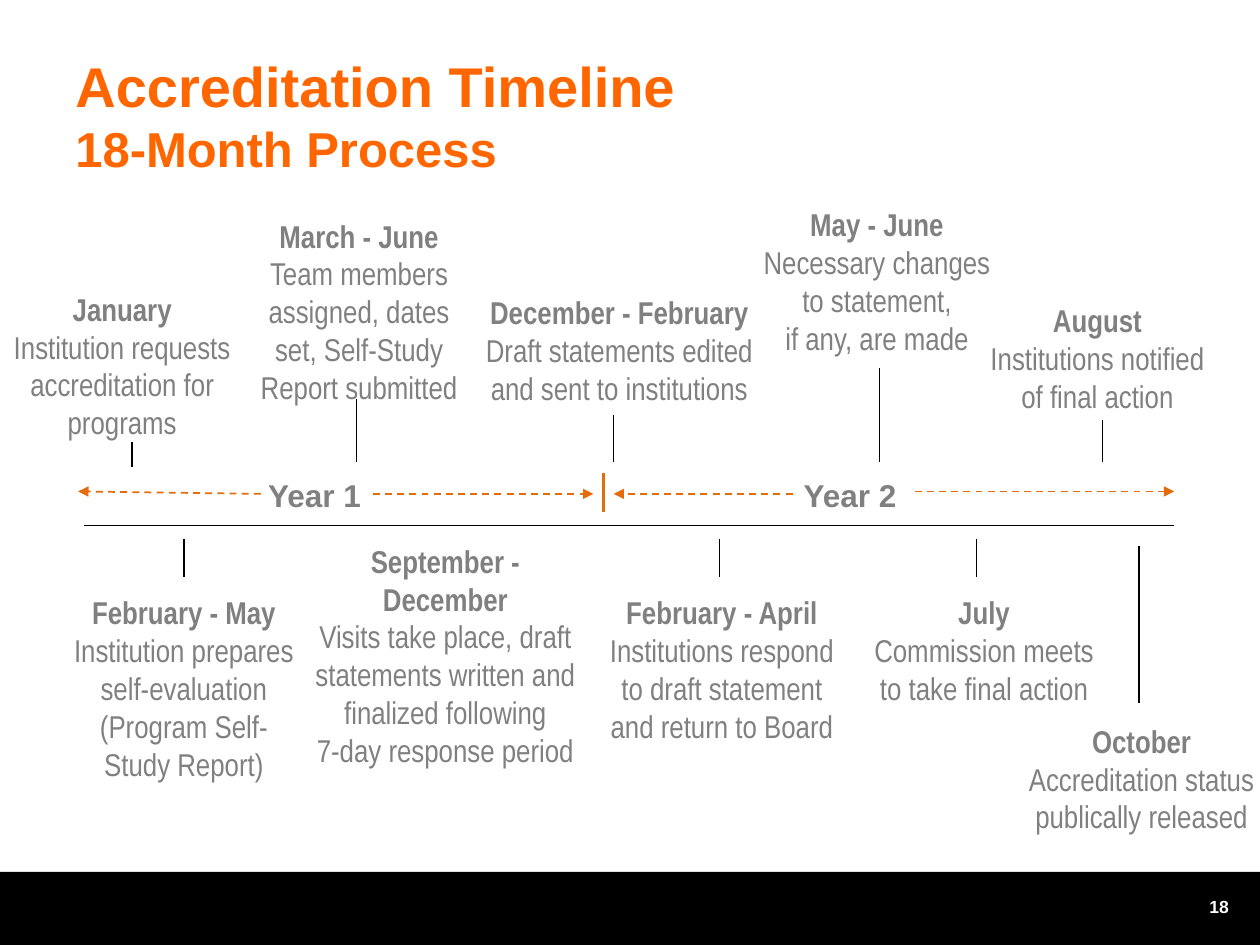
from typing import NamedTuple

from lxml.etree import SubElement
from pptx import Presentation
from pptx.dml.color import RGBColor
from pptx.enum.dml import MSO_LINE
from pptx.enum.shapes import MSO_CONNECTOR, MSO_SHAPE
from pptx.enum.text import PP_ALIGN
from pptx.oxml.ns import qn
from pptx.util import Inches, Pt

BLACK = "000000"
WHITE = "FFFFFF"
GRAY = "808080"
TITLE_ORANGE = "FF6600"
ARROW_ORANGE = "E46C0A"


class Milestone(NamedTuple):
    left: float
    top: float
    width: float
    height: float
    period: str
    details: list[str]
    wrap: bool = False


class Tick(NamedTuple):
    x: float
    top: float
    bottom: float


class YearArrow(NamedTuple):
    start: tuple[float, float]
    tip: tuple[float, float]


class Label(NamedTuple):
    left: float
    top: float
    width: float
    height: float
    text: str
    size: int
    color: str


MILESTONES = [
    Milestone(0, 2.25, 1.94, 1.31, "January",
              ["Institution requests", "accreditation for", "programs"]),
    Milestone(0.46, 4.66, 2, 1.61, "February - May",
              ["Institution prepares", "self-evaluation", "(Program Self-Study Report)"], True),
    Milestone(1.96, 1.67, 1.78, 1.61, "March - June",
              ["Team members assigned, dates set, Self-Study Report submitted"], True),
    Milestone(2.37, 4.25, 2.33, 1.92, "September - December",
              ["Visits take place, draft statements written and finalized following",
               "7-day response period"], True),
    Milestone(3.74, 2.28, 2.35, 1.01, "December - February",
              ["Draft statements edited", "and sent to institutions"]),
    Milestone(4.73, 4.66, 2, 1.31, "February - April",
              ["Institutions respond", "to draft statement", "and return to Board"]),
    Milestone(5.92, 1.58, 2.08, 1.31, "May - June",
              ["Necessary changes", "to statement,", "if any, are made"]),
    Milestone(6.79, 4.66, 2.04, 1.01, "July",
              ["Commission meets", "to take final action"], True),
    Milestone(7.75, 2.34, 1.92, 1.01, "August",
              ["Institutions notified", "of final action"]),
    Milestone(8.04, 5.68, 2.04, 1.01, "October",
              ["Accreditation status publically released"], True),
]

TICKS = [
    Tick(1.05, 3.51, 3.71),
    Tick(2.83, 3.17, 3.67),
    Tick(4.87, 3.29, 3.67),
    Tick(6.98, 2.92, 3.67),
    Tick(8.75, 3.33, 3.67),
    Tick(1.46, 4.28, 4.58),
    Tick(5.71, 4.28, 4.58),
    Tick(7.75, 4.28, 4.58),
    Tick(9.04, 4.33, 5.58),
]

YEAR_ARROWS = [
    YearArrow((2.07, 3.92), (0.62, 3.9)),
    YearArrow((2.96, 3.92), (4.71, 3.92)),
    YearArrow((6.29, 3.92), (4.87, 3.92)),
    YearArrow((7.26, 3.9), (9.32, 3.9)),
]

LABELS = [
    Label(2.03, 3.73, 1.09, 0.4, "Year 1", 18, GRAY),
    Label(6.28, 3.73, 1.09, 0.4, "Year 2", 18, GRAY),
    Label(9.5, 7.06, 0.45, 0.27, "18", 10, WHITE),
]


def rgb(color: str) -> RGBColor:
    return RGBColor.from_string(color)


def add_text(slide, left: float, top: float, width: float, height: float,
             lines: list[str], wrap: bool = True):
    shape = slide.shapes.add_textbox(Inches(left), Inches(top), Inches(width), Inches(height))
    text_frame = shape.text_frame
    text_frame.word_wrap = wrap
    text_frame.text = "\n".join(lines)
    return text_frame.paragraphs


def style(paragraph, size: int, color: str, font: str = "Arial", bold: bool = True) -> None:
    for run in paragraph.runs:
        run.font.name = font
        run.font.size = Pt(size)
        run.font.bold = bold
        run.font.color.rgb = rgb(color)


def add_line(slide, start: tuple[float, float], end: tuple[float, float],
             color: str = BLACK, weight: float = 1):
    x1, y1, x2, y2 = (Inches(value) for value in (*start, *end))
    connector = slide.shapes.add_connector(MSO_CONNECTOR.STRAIGHT, x1, y1, x2, y2)
    connector.line.color.rgb = rgb(color)
    connector.line.width = Pt(weight)
    SubElement(connector._element.spPr, qn("a:effectLst"))
    return connector


def add_year_arrow(slide, arrow: YearArrow) -> None:
    connector = add_line(slide, arrow.start, arrow.tip, ARROW_ORANGE)
    connector.line.dash_style = MSO_LINE.DASH
    SubElement(connector.line._get_or_add_ln(), qn("a:tailEnd"), type="triangle")


def add_milestone(slide, milestone: Milestone) -> None:
    paragraphs = add_text(slide, milestone.left, milestone.top, milestone.width,
                          milestone.height, [milestone.period, *milestone.details],
                          milestone.wrap)
    for index, paragraph in enumerate(paragraphs):
        paragraph.alignment = PP_ALIGN.CENTER
        style(paragraph, 18, GRAY, "Arial Narrow", index == 0)


def add_label(slide, label: Label) -> None:
    paragraphs = add_text(slide, label.left, label.top, label.width, label.height, [label.text])
    style(paragraphs[0], label.size, label.color)


def add_footer(slide) -> None:
    shape = slide.shapes.add_shape(MSO_SHAPE.RECTANGLE, Inches(0), Inches(6.92),
                                   Inches(10), Inches(0.58))
    shape.shadow.inherit = False
    shape.fill.solid()
    shape.fill.fore_color.rgb = rgb(BLACK)
    shape.line.fill.background()


def add_title(slide) -> None:
    paragraphs = add_text(slide, 0.5, 0.36, 9, 1.06,
                          ["Accreditation Timeline", "18-Month Process"])
    for paragraph, size in zip(paragraphs, (32, 28)):
        style(paragraph, size, TITLE_ORANGE)


def main() -> None:
    presentation = Presentation()
    presentation.slide_width = Inches(10)
    presentation.slide_height = Inches(7.5)
    slide = presentation.slides.add_slide(presentation.slide_layouts[6])

    add_footer(slide)
    add_title(slide)
    for milestone in MILESTONES:
        add_milestone(slide, milestone)
    add_line(slide, (0.67, 4.17), (9.32, 4.17))
    for tick in TICKS:
        add_line(slide, (tick.x, tick.top), (tick.x, tick.bottom))
    for arrow in YEAR_ARROWS:
        add_year_arrow(slide, arrow)
    add_line(slide, (4.79, 3.75), (4.79, 4.06), ARROW_ORANGE, 2)
    for label in LABELS:
        add_label(slide, label)

    presentation.save("out.pptx")


if __name__ == "__main__":
    main()
